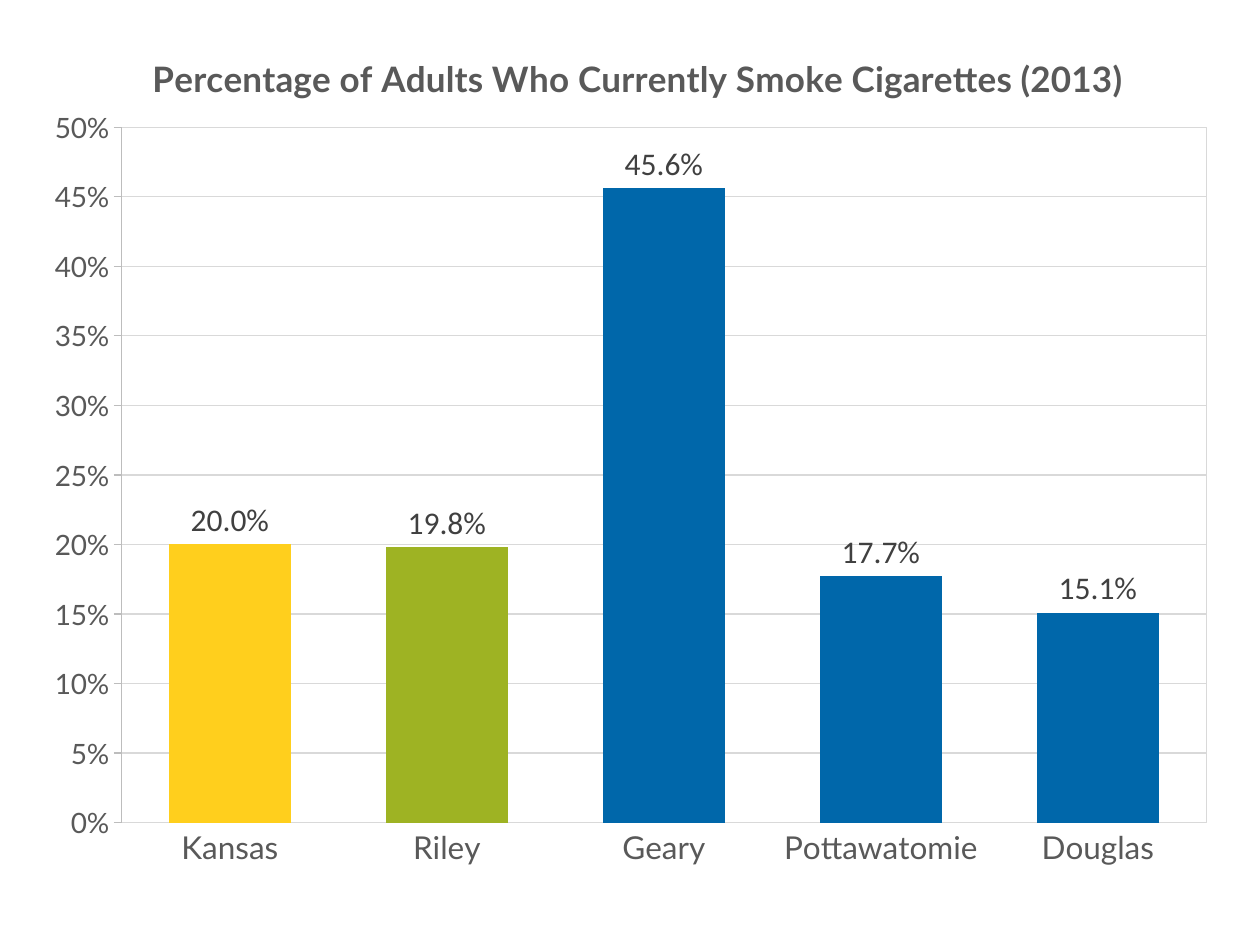
"""Build a slide with a column chart of adult smoking rates by county."""
from dataclasses import dataclass

from pptx import Presentation
from pptx import util as u
from pptx.chart import data as chart_data
from pptx.dml.color import RGBColor
from pptx.enum import chart as ch
from pptx.oxml import parse_xml
from pptx.oxml.ns import nsdecls, qn

YELLOW = RGBColor(0xFF, 0xCF, 0x1D)
GREEN = RGBColor(0x9E, 0xB3, 0x23)
BLUE = RGBColor(0x00, 0x67, 0xAA)
DARK_GREEN = RGBColor(0x06, 0x62, 0x43)
TEXT_GREY = RGBColor(0x59, 0x59, 0x59)
LABEL_GREY = RGBColor(0x40, 0x40, 0x40)
AXIS_GREY = RGBColor(0xBD, 0xBD, 0xBD)
GRID_GREY = RGBColor(0xD9, 0xD9, 0xD9)
BLACK = RGBColor(0, 0, 0)
TITLE = "Percentage of Adults Who Currently Smoke Cigarettes (2013)"


@dataclass(frozen=True)
class Column:
    place: str
    rate: float
    color: RGBColor


COLUMNS = (
    Column("Kansas", 0.2, YELLOW),
    Column("Riley", 0.198, GREEN),
    Column("Geary", 0.456, BLUE),
    Column("Pottawatomie", 0.177, BLUE),
    Column("Douglas", 0.151, BLUE),
)


def style_font(font, size: int, color: RGBColor, name: str = "Lato", bold: bool = False) -> None:
    font.name = name
    font.size = u.Pt(size)
    font.bold = bold
    font.color.rgb = color


def style_line(line, color: RGBColor) -> None:
    line.color.rgb = color
    line.width = u.Pt(0.75)


def place_element(element, index: int, target: str = "", **position: float) -> None:
    for layout in element.findall(qn("c:layout")):
        element.remove(layout)
    target_xml = f'<c:layoutTarget val="{target}"/>' if target else ""
    modes = "".join(f'<c:{side}Mode val="edge"/>' for side in ("x", "y"))
    values = "".join(f'<c:{key} val="{value}"/>' for key, value in position.items())
    element.insert(index, parse_xml(
        f'<c:layout {nsdecls("c")}><c:manualLayout>{target_xml}{modes}{values}'
        "</c:manualLayout></c:layout>"))


def frame_plot(plot_area) -> None:
    plot_area.append(parse_xml(
        f'<c:spPr {nsdecls("c", "a")}><a:noFill/><a:ln w="9525"><a:solidFill>'
        f'<a:srgbClr val="{GRID_GREY}"/></a:solidFill></a:ln></c:spPr>'))


def style_title(chart) -> None:
    chart.has_title = True
    run = chart.chart_title.text_frame.paragraphs[0].add_run()
    run.text = TITLE
    style_font(run.font, 20, TEXT_GREY, bold=True)
    chart.chart_title.include_in_layout = False
    place_element(chart.chart_title._element, 1, x=0.11, y=0.04)


def style_axes(chart) -> None:
    category_axis, value_axis = chart.category_axis, chart.value_axis
    category_axis.major_tick_mark = ch.XL_TICK_MARK.NONE
    style_font(category_axis.tick_labels.font, 18, TEXT_GREY)
    style_line(category_axis.format.line, GRID_GREY)
    value_axis.minimum_scale, value_axis.maximum_scale = 0, 0.5
    value_axis.major_unit = 0.05
    value_axis.major_tick_mark = ch.XL_TICK_MARK.OUTSIDE
    value_axis.tick_labels.number_format = "0%"
    value_axis.tick_labels.number_format_is_linked = False
    style_font(value_axis.tick_labels.font, 16, TEXT_GREY)
    style_line(value_axis.format.line, AXIS_GREY)
    style_line(value_axis.major_gridlines.format.line, GRID_GREY)


def style_columns(plot) -> None:
    plot.gap_width = 77
    plot.vary_by_categories = False
    series = plot.series[0]
    series.format.fill.solid()
    series.format.fill.fore_color.rgb = DARK_GREEN
    for index, column in enumerate(COLUMNS):
        fill = series.points[index].format.fill
        fill.solid()
        fill.fore_color.rgb = column.color
    labels = series.data_labels
    labels.show_value = True
    labels.number_format = "0.0%"
    labels.number_format_is_linked = False
    labels.position = ch.XL_LABEL_POSITION.OUTSIDE_END
    style_font(labels.font, 18, LABEL_GREY, "Calibri")


def add_smoking_chart(slide) -> None:
    rates = chart_data.CategoryChartData(number_format="0.0%")
    rates.categories = [column.place for column in COLUMNS]
    rates.add_series("Series 1", [column.rate for column in COLUMNS])
    chart = slide.shapes.add_chart(
        ch.XL_CHART_TYPE.COLUMN_CLUSTERED,
        u.Cm(0.2), u.Cm(0.2), u.Cm(24.97), u.Cm(18.62), rates).chart
    chart.has_legend = False
    style_font(chart.font, 10, BLACK, "Calibri")
    style_title(chart)
    style_axes(chart)
    style_columns(chart.plots[0])
    plot_area = chart._chartSpace.chart.plotArea
    place_element(plot_area, 0, "inner", x=0.09, y=0.127, w=0.876, h=0.753)
    frame_plot(plot_area)


def main() -> None:
    presentation = Presentation()
    presentation.slide_width, presentation.slide_height = u.Cm(25.4), u.Cm(19.05)
    slide = presentation.slides.add_slide(presentation.slide_layouts[6])
    add_smoking_chart(slide)
    presentation.save("out.pptx")


if __name__ == "__main__":
    main()
